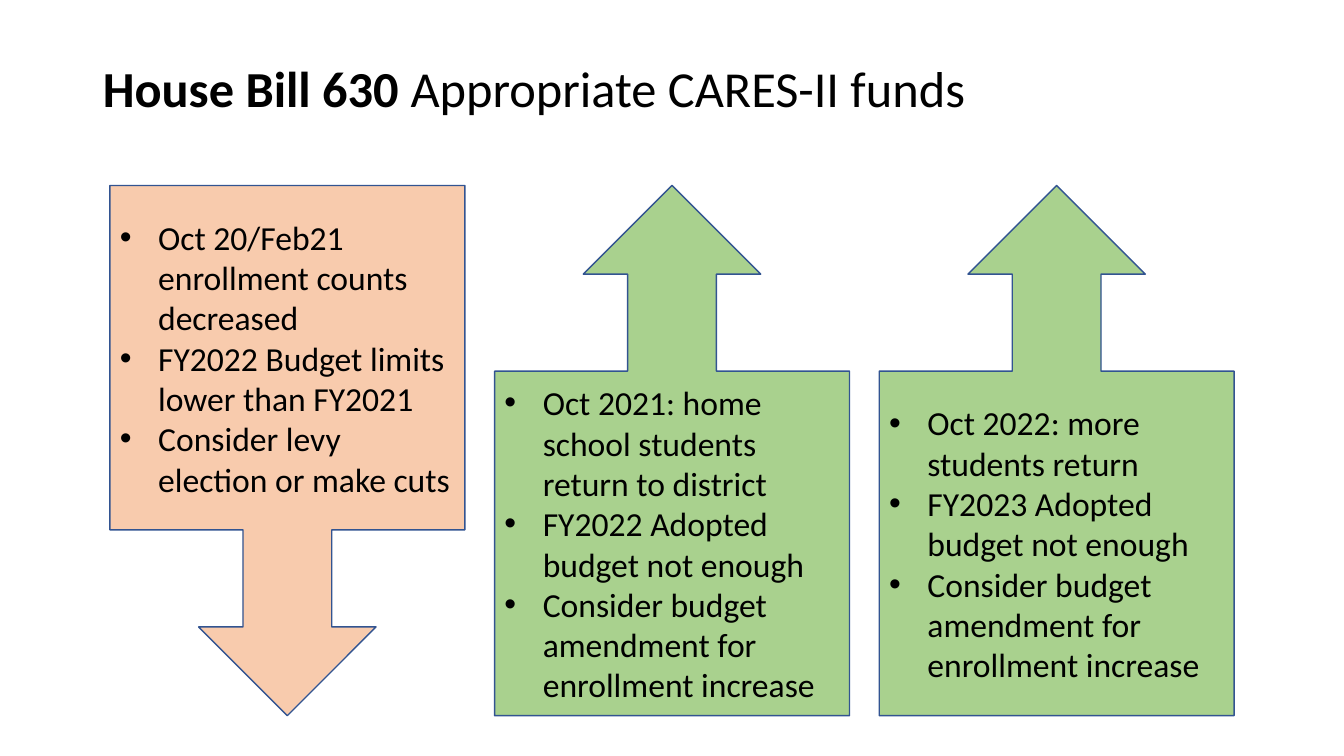
from lxml.etree import SubElement
from pptx import Presentation
from pptx.dml.color import RGBColor
from pptx.enum.shapes import MSO_SHAPE
from pptx.enum.text import MSO_ANCHOR, PP_ALIGN
from pptx.oxml.ns import qn
from pptx.util import Inches, Pt

BLACK = RGBColor(0x00, 0x00, 0x00)
PEACH = RGBColor(0xF8, 0xCB, 0xAD)
GREEN = RGBColor(0xA9, 0xD1, 0x8E)
OUTLINE = RGBColor(0x32, 0x54, 0x91)
FONT = "Calibri"

HEADING = [("House Bill 630 ", True), ("Appropriate CARES-II funds", False)]
CALLOUTS = [
    (MSO_SHAPE.DOWN_ARROW_CALLOUT, PEACH, [
        "Oct 20/Feb21 enrollment counts decreased",
        "FY2022 Budget limits lower than FY2021",
        "Consider levy election or make cuts",
    ]),
    (MSO_SHAPE.UP_ARROW_CALLOUT, GREEN, [
        "Oct 2021: home school students return to district",
        "FY2022 Adopted budget not enough",
        "Consider budget amendment for enrollment increase",
    ]),
    (MSO_SHAPE.UP_ARROW_CALLOUT, GREEN, [
        "Oct 2022: more students return",
        "FY2023 Adopted budget not enough",
        "Consider budget amendment for enrollment increase",
    ]),
]
FIRST_LEFT, TOP, WIDTH, HEIGHT = 1.09, 1.84, 3.52, 5.26
PITCH = 3.815
INDENT = Inches(0.38)


def add_run(paragraph, text, size, bold=False):
    run = paragraph.add_run()
    run.text = text
    run.font.name = FONT
    run.font.size = Pt(size)
    run.font.bold = bold
    run.font.color.rgb = BLACK


def add_bullet(paragraph):
    properties = paragraph._p.get_or_add_pPr()
    properties.set("marL", str(INDENT))
    properties.set("indent", str(-INDENT))
    SubElement(properties, qn("a:buFont")).set("typeface", "Arial")
    SubElement(properties, qn("a:buChar")).set("char", "•")


def add_callout(slide, column, arrow, color, points):
    left = FIRST_LEFT + column * PITCH
    callout = slide.shapes.add_shape(
        arrow, Inches(left), Inches(TOP), Inches(WIDTH), Inches(HEIGHT))
    callout.shadow.inherit = False
    callout.fill.solid()
    callout.fill.fore_color.rgb = color
    callout.line.color.rgb = OUTLINE
    callout.line.width = Pt(1)
    frame = callout.text_frame
    frame.word_wrap = True
    frame.vertical_anchor = MSO_ANCHOR.MIDDLE
    for index, point in enumerate(points):
        paragraph = frame.add_paragraph() if index else frame.paragraphs[0]
        paragraph.alignment = PP_ALIGN.LEFT
        add_bullet(paragraph)
        add_run(paragraph, point, 24)


def main():
    deck = Presentation()
    deck.slide_width, deck.slide_height = Inches(13.33), Inches(7.5)
    slide = deck.slides.add_slide(deck.slide_layouts[5])

    title = slide.shapes.title
    title.left, title.top = Inches(0.92), Inches(0.4)
    title.width, title.height = Inches(11.5), Inches(1)
    title.text_frame.vertical_anchor = MSO_ANCHOR.MIDDLE
    heading = title.text_frame.paragraphs[0]
    heading.alignment = PP_ALIGN.LEFT
    heading.line_spacing = 0.9
    for text, bold in HEADING:
        add_run(heading, text, 36, bold)

    for column, (arrow, color, points) in enumerate(CALLOUTS):
        add_callout(slide, column, arrow, color, points)

    deck.save("out.pptx")


if __name__ == "__main__":
    main()
